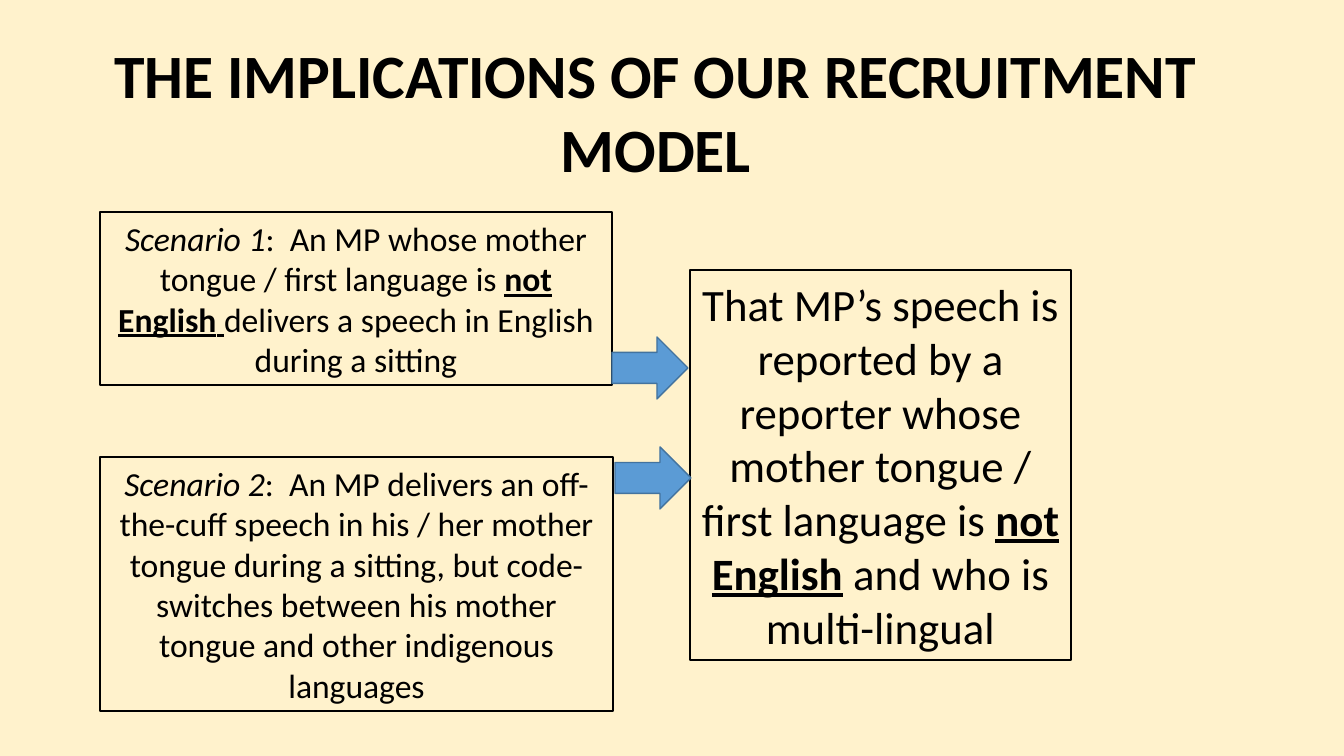
from pptx import Presentation
from pptx.dml.color import RGBColor
from pptx.enum.shapes import MSO_SHAPE
from pptx.enum.text import MSO_ANCHOR, MSO_AUTO_SIZE, PP_ALIGN
from pptx.util import Pt

# Content: runs are (text, style letters), with b = bold, i = italic, u = underline
TITLE = [("THE IMPLICATIONS OF OUR RECRUITMENT MODEL", "b")]
SCENARIO_1 = [
    ("Scenario 1", "i"),
    (":  An MP whose mother tongue / first language is ", ""),
    ("not", "bu"), (" ", "u"), ("English", "bu"), (" ", "u"),
    ("delivers a speech in English during a sitting", ""),
]
SCENARIO_2 = [
    ("Scenario 2", "i"),
    (":  An MP delivers an off-the-cuff speech in his / her mother tongue "
     "during a sitting, but code-switches between his mother tongue and "
     "other indigenous languages", ""),
]
OUTCOME = [
    ("That MP’s speech is reported by a reporter whose mother tongue / "
     "first language is ", ""),
    ("not", "bu"), (" ", "u"), ("English", "bu"),
    (" and who is multi-lingual", ""),
]

# Places in px: left, top, width, height
TITLE_AT = (71, 31, 1170, 159)
BOXES = [
    (SCENARIO_1, 24, (100, 212, 512, 173)),
    (OUTCOME, 32, (690, 270, 381, 390)),
    (SCENARIO_2, 24, (100, 457, 513, 254)),
]
ARROWS = [(612, 337, 76, 62), (615, 447, 76, 62)]

EMU_PER_PX = 914400 / 100.8


def px(*lengths):
    return [round(n * EMU_PER_PX) for n in lengths]


def color(value):
    return RGBColor.from_string(value)


def write(sp, runs, size):
    tf = sp.text_frame
    tf.word_wrap = True
    tf.auto_size = MSO_AUTO_SIZE.NONE
    tf.vertical_anchor = MSO_ANCHOR.MIDDLE
    p = tf.paragraphs[0]
    p.alignment = PP_ALIGN.CENTER
    for text, style in runs:
        r = p.add_run()
        r.text = text
        r.font.name = "Calibri"
        r.font.size = Pt(size)
        r.font.color.rgb = color("000000")
        r.font.bold = "b" in style
        r.font.italic = "i" in style
        r.font.underline = "u" in style


def add_shape(slide, kind, at, line):
    sp = slide.shapes.add_shape(kind, *px(*at))
    sp.shadow.inherit = False
    sp.line.color.rgb = color(line)
    sp.line.width = Pt(1)
    return sp


def main():
    prs = Presentation()
    prs.slide_width, prs.slide_height = px(1344, 756)
    slide = prs.slides.add_slide(prs.slide_layouts[5])
    slide.background.fill.solid()
    slide.background.fill.fore_color.rgb = color("FFF2CC")

    # Title
    title = slide.shapes.title
    title.left, title.top, title.width, title.height = px(*TITLE_AT)
    write(title, TITLE, 44)

    # Scenarios and their outcome
    for runs, size, at in BOXES:
        sp = add_shape(slide, MSO_SHAPE.RECTANGLE, at, "000000")
        sp.fill.background()
        write(sp, runs, size)

    # Arrows from each scenario to the outcome
    for at in ARROWS:
        sp = add_shape(slide, MSO_SHAPE.RIGHT_ARROW, at, "43739E")
        sp.fill.solid()
        sp.fill.fore_color.rgb = color("5B9BD5")

    prs.save("out.pptx")


if __name__ == "__main__":
    main()
